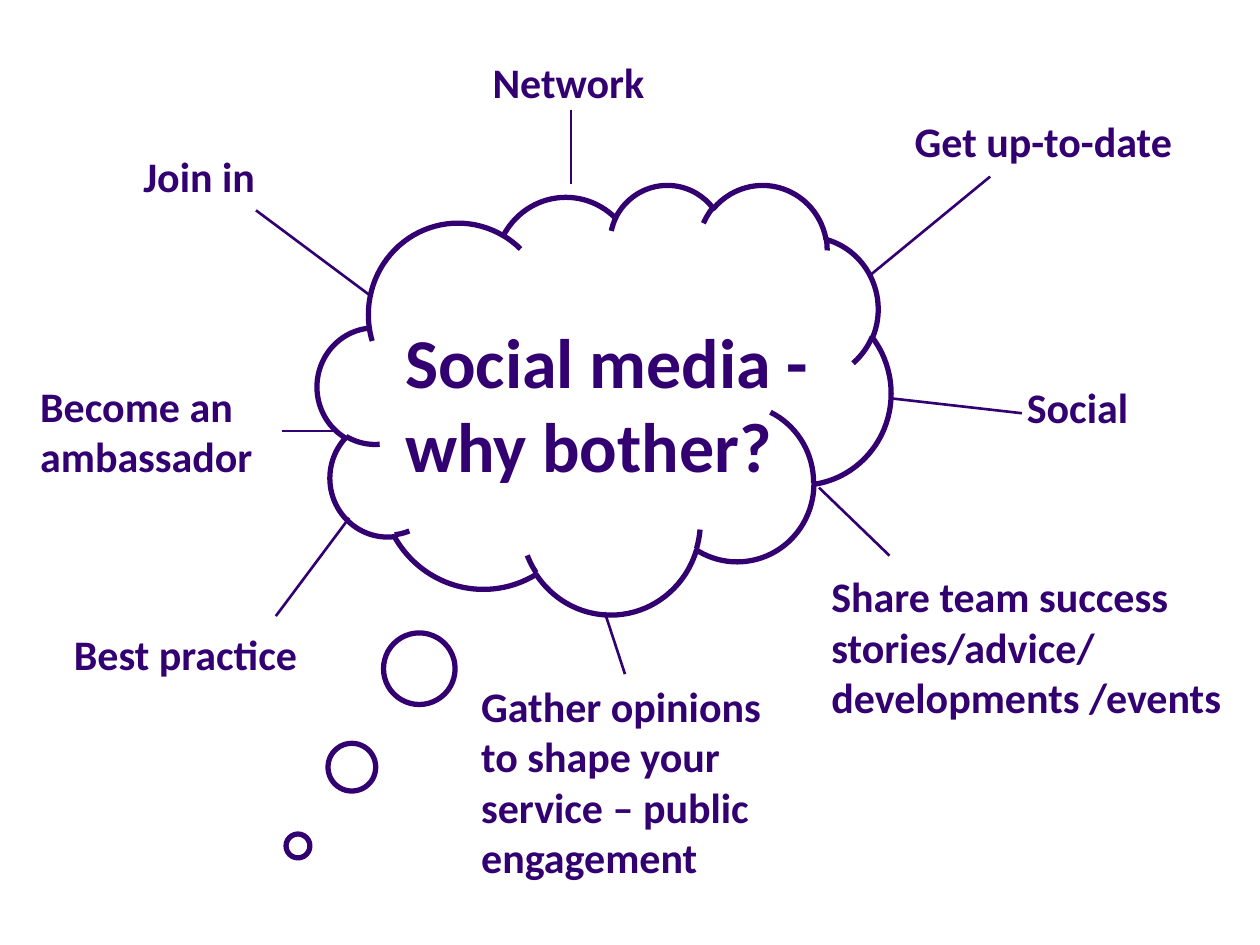
from lxml import etree
from pptx import Presentation
from pptx.dml.color import RGBColor
from pptx.enum import shapes, text
from pptx.oxml import ns
from pptx.util import Cm, Pt

COLORS = {"ink": "330072", "paper": "FFFFFF"}
CLOUD_BOX = (6.4, 3.71, 11.56, 8.66)
BRANCHES = [
    ("Join in", (2.64, 2.9, 2.77, 1.27), (2.52, 1.34), (4.8, 3.04)),
    ("Network", (9.68, 1.02, 5.56, 1.27), (1.83, 1.19), (1.83, 2.69)),
    ("Get up-to-date", (18.19, 2.21, 6.22, 1.27), (1.77, 1.35), (-0.64, 3.33)),
    ("Become an ambassador", (0.56, 7.54, 5.56, 2.31), (5.13, 1.15), (6.17, 1.15)),
    ("Best practice", (1.24, 12.55, 5.56, 1.27), (4.32, -0.13), (5.8, -2.11)),
    ("Social", (20.45, 7.57, 2.77, 1.27), (0.15, 0.76), (-2.49, 0.46)),
    ("Share team success stories/advice/ developments /events",
     (16.51, 11.38, 8.38, 3.33), (1.42, -0.18), (0, -1.55)),
    ("Gather opinions to shape your service – public engagement",
     (9.45, 13.59, 6.3, 4.37), (3.15, 0), (2.74, -1.25)),
]


def rgb(role):
    """Return the colour for a role."""
    return RGBColor.from_string(COLORS[role])


def add_label(slide, box, wording, size):
    """Add bold wrapped wording in the given box."""
    label = slide.shapes.add_textbox(*map(Cm, box))
    frame = label.text_frame
    frame.word_wrap = True
    frame.auto_size = text.MSO_AUTO_SIZE.SHAPE_TO_FIT_TEXT
    run = frame.paragraphs[0].add_run()
    run.text = wording
    for key, value in {"name": "Calibri", "size": Pt(size), "bold": True}.items():
        setattr(run.font, key, value)
    run.font.color.rgb = rgb("ink")
    return label


def add_cloud(slide, box):
    """Draw the thought cloud with the central question."""
    left, top, width, height = box
    cloud = slide.shapes.add_shape(shapes.MSO_SHAPE.CLOUD_CALLOUT, *map(Cm, box))
    cloud.adjustments[0], cloud.adjustments[1] = -0.534, 1.041
    cloud.shadow.inherit = False
    cloud.fill.solid()
    cloud.fill.fore_color.rgb = rgb("paper")
    cloud.line.color.rgb = rgb("ink")
    cloud.line.width = Pt(3)
    question_box = (left + 1.52, top + 2.59, 9.07, 3.68)
    add_label(slide, question_box, "Social media - why bother?", 40)


def add_branch(slide, wording, box, start, end):
    """Add a reason and its spoke, offset from the corner of the box."""
    left, top, width, height = box
    reason = add_label(slide, box, wording, 24)
    points = [Cm(corner + offset) for point in (start, end)
              for corner, offset in zip((left, top), point)]
    spoke = slide.shapes.add_connector(shapes.MSO_CONNECTOR.STRAIGHT, *points)
    spoke.line.color.rgb = rgb("ink")
    spoke.line.width = Pt(1.5)
    etree.SubElement(spoke._element.spPr, ns.qn("a:effectLst"))
    if start == (width / 2, 0):
        spoke.begin_connect(reason, 0)


def main():
    """Build the mind map slide."""
    deck = Presentation()
    deck.slide_width, deck.slide_height = Cm(25.4), Cm(19.05)
    slide = deck.slides.add_slide(deck.slide_layouts[6])
    add_cloud(slide, CLOUD_BOX)
    for branch in BRANCHES:
        add_branch(slide, *branch)
    deck.save("out.pptx")


if __name__ == "__main__":
    main()
